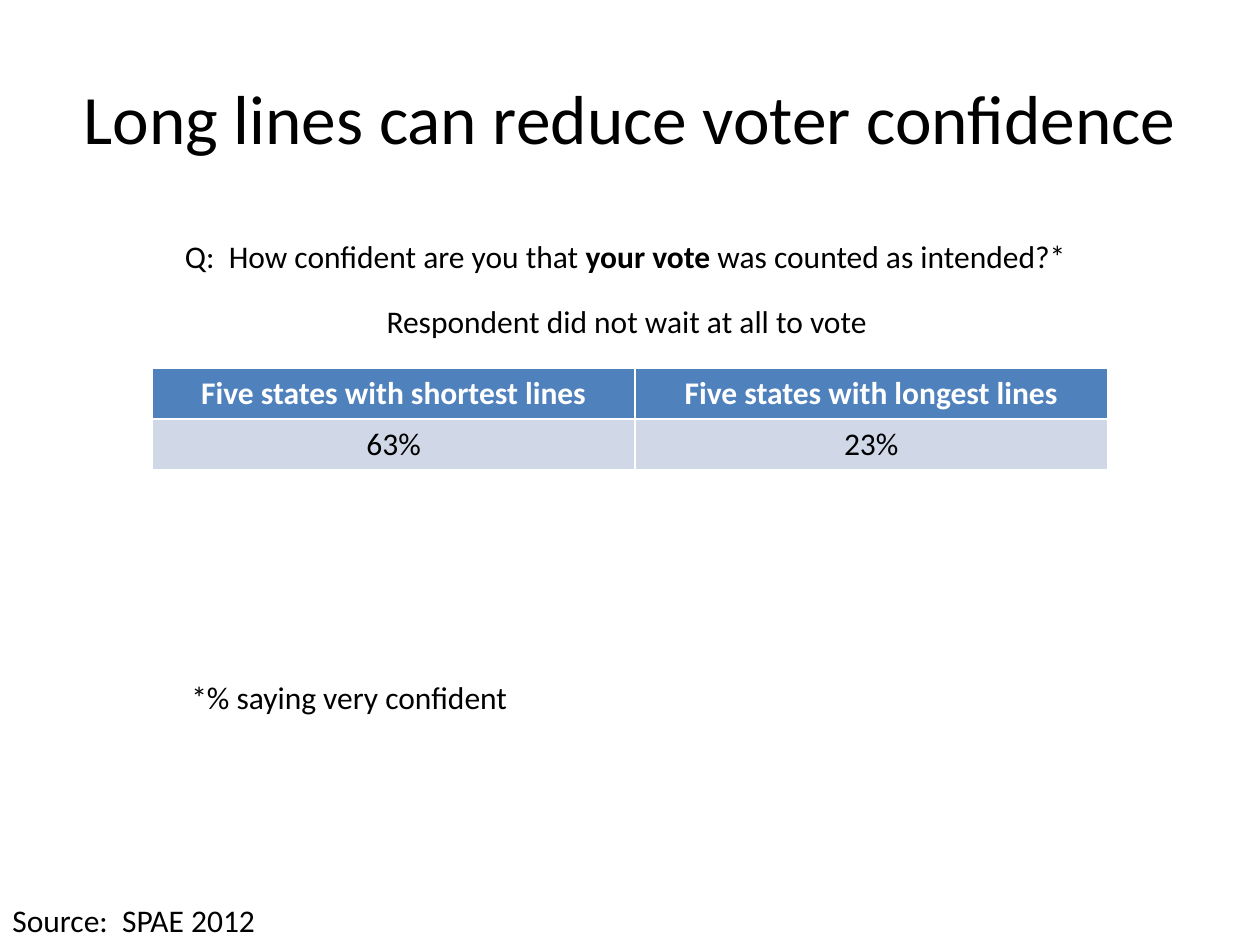
from pptx import Presentation
from pptx.dml.color import RGBColor
from pptx.enum.text import MSO_ANCHOR, PP_ALIGN
from pptx.util import Inches, Pt

FONT = "Calibri"
BLACK, WHITE = "000000", "FFFFFF"
HEADER_FILL, BODY_FILL = "4F81BD", "D0D8E8"
TEXT_SIZE, TITLE_SIZE = 18, 39.6
LINE_HEIGHT = 0.4


def colour(hex_string):
    return RGBColor.from_string(hex_string)


def inches(box):
    return [Inches(length) for length in box]


def add_run(paragraph, text, size=TEXT_SIZE, ink=BLACK, bold=False):
    run = paragraph.add_run()
    run.text = text
    run.font.name = FONT
    run.font.size = Pt(size)
    run.font.bold = bold
    run.font.color.rgb = colour(ink)


def place_title(slide, box, text):
    title = slide.shapes.title
    title.left, title.top, title.width, title.height = inches(box)
    title.text_frame.vertical_anchor = MSO_ANCHOR.MIDDLE
    heading = title.text_frame.paragraphs[0]
    heading.alignment = PP_ALIGN.CENTER
    add_run(heading, text, TITLE_SIZE)


def place_line(slide, box, *parts):
    """Add one line of text; each part is a (text, bold) pair."""
    frame = slide.shapes.add_textbox(*inches(box)).text_frame
    frame.word_wrap = False
    for text, bold in parts:
        add_run(frame.paragraphs[0], text, bold=bold)


def place_results(slide, box, column_widths, rows):
    table = slide.shapes.add_table(len(rows), len(column_widths), *inches(box)).table
    for column, width in zip(table.columns, column_widths):
        column.width = Inches(width)
    for row_index, row in enumerate(rows):
        is_header = row_index == 0
        for column_index, text in enumerate(row):
            cell = table.cell(row_index, column_index)
            cell.fill.solid()
            cell.fill.fore_color.rgb = colour(HEADER_FILL if is_header else BODY_FILL)
            paragraph = cell.text_frame.paragraphs[0]
            paragraph.alignment = PP_ALIGN.CENTER
            add_run(paragraph, text, ink=WHITE if is_header else BLACK, bold=is_header)


def main():
    deck = Presentation()
    deck.slide_width, deck.slide_height = Inches(10), Inches(7.5)
    slide = deck.slides.add_slide(deck.slide_layouts[5])

    place_title(slide, (0.5, 0.3, 9, 1.25), "Long lines can reduce voter confidence")

    # Confidence by length of line
    place_results(slide, (1.21, 2.92, 7.58, 0.81), (3.83, 3.75), [
        ("Five states with shortest lines", "Five states with longest lines"),
        ("63%", "23%"),
    ])

    # Survey question, footnote, table caption and source
    place_line(slide, (1.37, 1.83, 7.26, LINE_HEIGHT),
               ("Q:  How confident are you that ", False),
               ("your vote", True),
               (" was counted as intended?*", False))
    place_line(slide, (1.42, 5.33, 2.74, LINE_HEIGHT), ("*% saying very confident", False))
    place_line(slide, (2.97, 2.35, 4.06, LINE_HEIGHT),
               ("Respondent did not wait at all to vote", False))
    place_line(slide, (0, 7.1, 2.15, LINE_HEIGHT), ("Source:  SPAE 2012", False))

    deck.save("out.pptx")


if __name__ == "__main__":
    main()
